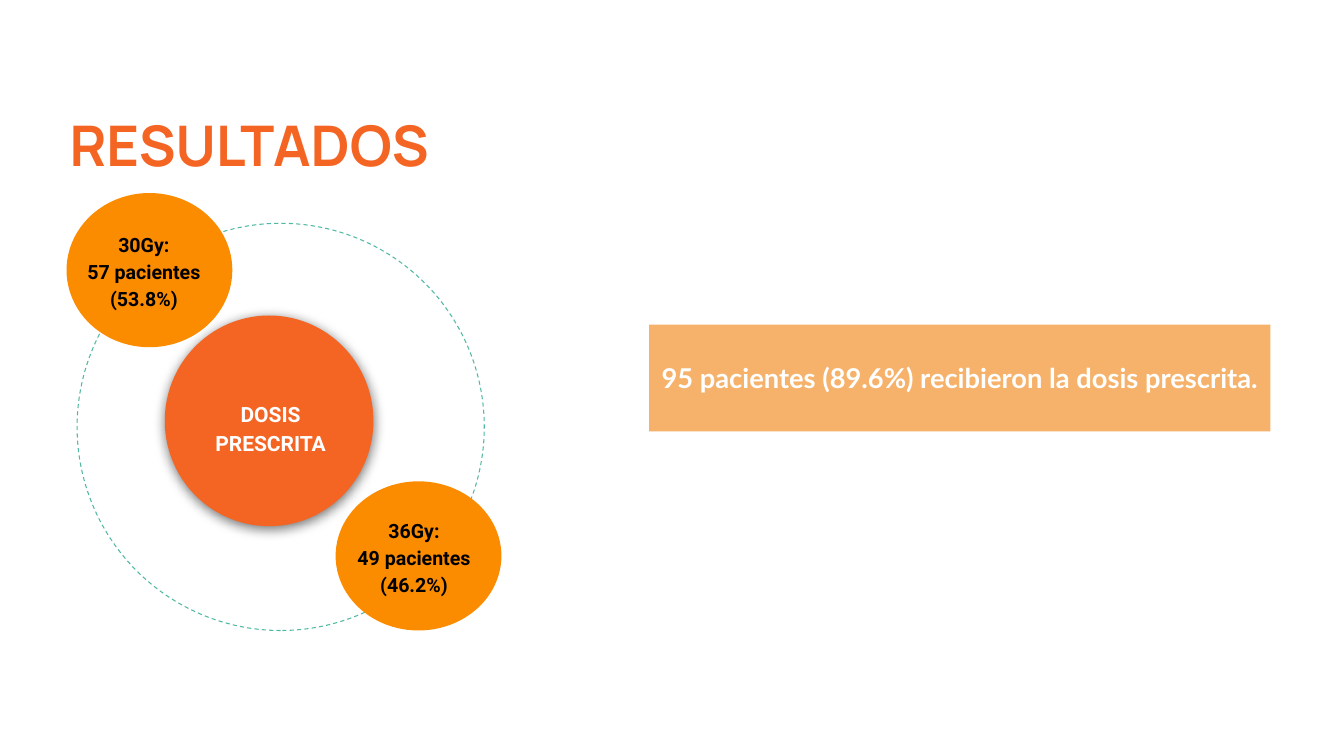
from dataclasses import dataclass

from lxml.etree import SubElement
from pptx import Presentation
from pptx.dml.color import RGBColor
from pptx.enum.dml import MSO_LINE
from pptx.enum.shapes import MSO_SHAPE
from pptx.enum.text import MSO_ANCHOR, PP_ALIGN
from pptx.oxml.ns import qn
from pptx.util import Emu, Pt

SCALE = 9144  # EMU per px, 100 px to the inch


@dataclass(frozen=True)
class Theme:
    orange: str = "F46524"
    amber: str = "FB8C00"
    sand: str = "F6B26B"
    green: str = "51B9A3"
    white: str = "FFFFFF"
    black: str = "000000"
    title: int = 80
    banner: int = 39
    core: int = 30
    dose: int = 28


@dataclass(frozen=True)
class Box:
    left: int
    top: int
    width: int
    height: int

    def emu(self) -> list[Emu]:
        return [Emu(n * SCALE) for n in (self.left, self.top, self.width, self.height)]


@dataclass(frozen=True)
class Dose:
    disc: Box
    label: Box
    lines: tuple[str, ...]


THEME = Theme()
DOSES = (
    Dose(Box(132, 383, 329, 306), Box(157, 442, 257, 186),
         ("30Gy:", "57 pacientes", "(53.8%)")),
    Dose(Box(666, 955, 329, 296), Box(693, 1002, 257, 203),
         ("36Gy:", "49 pacientes (46.2%)")),
)


def add_shape(slide, kind: MSO_SHAPE, box: Box, fill: str | None = None):
    """Draw a flat preset shape without outline."""
    shape = slide.shapes.add_shape(kind, *box.emu())
    shape.shadow.inherit = False
    if fill:
        shape.fill.solid()
        shape.fill.fore_color.rgb = RGBColor.from_string(fill)
    else:
        shape.fill.background()
    shape.line.fill.background()
    return shape


def add_glow(shape, color: str) -> None:
    """Give a shape a soft shadow that falls straight down."""
    effects = shape._element.spPr.find(qn("a:effectLst"))
    outer = SubElement(effects, qn("a:outerShdw"), blurRad=str(Pt(18)),
                       dist=str(Pt(4)), dir="5400000", algn="bl", rotWithShape="0")
    tint = SubElement(outer, qn("a:srgbClr"), val=color)
    SubElement(tint, qn("a:alpha"), val="55000")


def add_text(slide, box: Box, *lines: str, size: int, color: str,
             font: str = "Roboto", align: PP_ALIGN = PP_ALIGN.CENTER,
             anchor: MSO_ANCHOR = MSO_ANCHOR.MIDDLE,
             spacing: float = 1.15, inset: int = 10, shape=None) -> None:
    """Write bold lines in a new text box, or in the given shape."""
    frame = (shape or slide.shapes.add_textbox(*box.emu())).text_frame
    frame.word_wrap = True
    frame.vertical_anchor = anchor
    frame.margin_left = frame.margin_right = Emu(inset * SCALE)
    frame.margin_top = frame.margin_bottom = Emu(inset * SCALE)
    frame.text = "\n".join(lines)
    for para in frame.paragraphs:
        para.alignment = align
        para.line_spacing = spacing
        for run in para.runs:
            run.font.name = font
            run.font.size = Pt(size)
            run.font.bold = True
            run.font.color.rgb = RGBColor.from_string(color)


def main() -> None:
    deck = Presentation()
    deck.slide_width, deck.slide_height = Emu(2667 * SCALE), Emu(1500 * SCALE)
    slide = deck.slides.add_slide(deck.slide_layouts[6])

    # Title
    add_text(slide, Box(132, -151, 2403, 508), "RESULTADOS", size=THEME.title,
             color=THEME.orange, font="Manrope", align=PP_ALIGN.LEFT,
             anchor=MSO_ANCHOR.BOTTOM, spacing=0.8, inset=6)

    # Dashed orbit
    orbit = add_shape(slide, MSO_SHAPE.OVAL, Box(153, 443, 808, 808))
    orbit.rotation = 270
    orbit.line.color.rgb = RGBColor.from_string(THEME.green)
    orbit.line.width = Pt(1.5)
    orbit.line.dash_style = MSO_LINE.DASH

    # Core disc
    core = add_shape(slide, MSO_SHAPE.OVAL, Box(327, 626, 414, 418), THEME.orange)
    add_glow(core, THEME.black)
    add_text(slide, Box(362, 765, 350, 163), "DOSIS PRESCRITA",
             size=THEME.core, color=THEME.white)

    # Dose discs
    for dose in DOSES:
        add_shape(slide, MSO_SHAPE.OVAL, dose.disc, THEME.amber)
        add_text(slide, dose.label, *dose.lines, size=THEME.dose, color=THEME.black)

    # Banner
    place = Box(1288, 644, 1233, 212)
    banner = add_shape(slide, MSO_SHAPE.RECTANGLE, place, THEME.sand)
    add_text(slide, place, "95 pacientes (89.6%) recibieron la dosis prescrita.",
             size=THEME.banner, color=THEME.white, font="Lato", spacing=1.0,
             shape=banner)

    deck.save("out.pptx")


if __name__ == "__main__":
    main()
